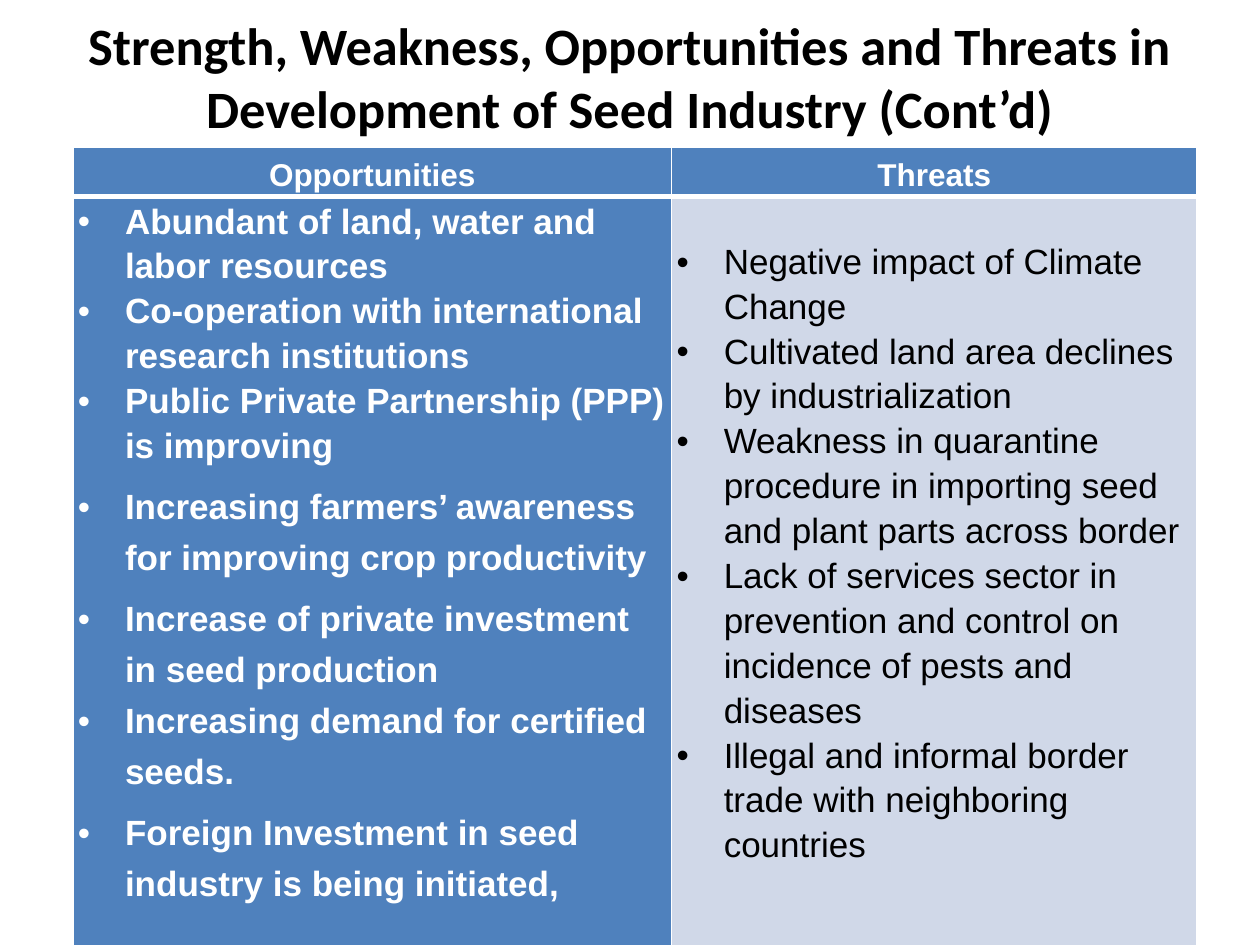
from lxml import etree
from pptx import Presentation
from pptx import util as u
from pptx.dml.color import RGBColor
from pptx.enum import text
from pptx.oxml.ns import qn

COLOURS = {"ink": "000000", "paper": "FFFFFF", "blue": "4F81BD", "pale": "D0D8E8"}

TITLE = ("Strength, Weakness, Opportunities and Threats in "
         "Development of Seed Industry (Cont’d)")
# Each point: wording, line spacing, space before in points
OPPORTUNITIES = [
    ("Abundant of land, water and labor resources", 1.15, 0),
    ("Co-operation with international research institutions", 1.15, 0),
    ("Public Private Partnership (PPP) is improving", 1.15, 0),
    ("Increasing farmers’ awareness for improving crop productivity", 1.3, 6),
    ("Increase of private investment in seed production", 1.3, 6),
    ("Increasing demand for certified seeds.", 1.3, 0),
    ("Foreign Investment in seed industry is being initiated,", 1.3, 6),
]
THREATS = [(wording, 1.15, 0) for wording in (
    "Negative impact of Climate Change",
    "Cultivated land area declines by industrialization",
    "Weakness in quarantine procedure in importing seed and plant parts across border",
    "Lack of services sector in prevention and control on incidence of pests and diseases",
    "Illegal and informal border trade with neighboring countries",
)]


class SlideWriter:
    def __init__(self, slide, font="Arial"):
        self.slide = slide
        self.font = font

    def run(self, paragraph, wording, size, colour, bold=True, font=None):
        run = paragraph.add_run()
        run.text = wording
        run.font.name = font or self.font
        run.font.size = u.Pt(size)
        run.font.bold = bold
        run.font.color.rgb = RGBColor.from_string(COLOURS[colour])

    def title(self, wording, left, top, width, height):
        box = self.slide.shapes.add_textbox(u.Cm(left), u.Cm(top), u.Cm(width), u.Cm(height))
        frame = box.text_frame
        frame.word_wrap = True
        frame.vertical_anchor = text.MSO_ANCHOR.MIDDLE
        heading = frame.paragraphs[0]
        heading.alignment = text.PP_ALIGN.CENTER
        self.run(heading, wording, 30, "ink", font="Calibri")

    def table(self, left, top, widths, heights):
        table = self.slide.shapes.add_table(
            len(heights), len(widths), u.Cm(left), u.Cm(top),
            u.Cm(sum(widths)), u.Cm(sum(heights))).table
        for column, width in zip(table.columns, widths):
            column.width = u.Cm(width)
        for row, height in zip(table.rows, heights):
            row.height = u.Cm(height)
        return table

    def cell(self, cell, fill, top_margin=0, top_line=1, bottom_line=1):
        cell.margin_left = cell.margin_right = u.Cm(0.1)
        cell.margin_top, cell.margin_bottom = u.Cm(top_margin), 0
        borders = {"lnL": 1, "lnR": 1, "lnT": top_line, "lnB": bottom_line}
        for side, points in borders.items():
            line = etree.SubElement(cell._tc.get_or_add_tcPr(), qn(f"a:{side}"),
                                    w=str(u.Pt(points)))
            solid = etree.SubElement(line, qn("a:solidFill"))
            etree.SubElement(solid, qn("a:srgbClr"), val=COLOURS["paper"])
        cell.fill.solid()
        cell.fill.fore_color.rgb = RGBColor.from_string(COLOURS[fill])

    def header(self, cell, wording):
        self.cell(cell, "blue", bottom_line=3)
        label = cell.text_frame.paragraphs[0]
        label.alignment = text.PP_ALIGN.CENTER
        label.line_spacing = 1.3
        self.run(label, wording, 18, "paper")

    def bullets(self, cell, points, fill, colour, bold, top_margin=0):
        self.cell(cell, fill, top_margin, top_line=3)
        frame = cell.text_frame
        for index, (wording, spacing, before) in enumerate(points):
            point = frame.add_paragraph() if index else frame.paragraphs[0]
            props = point._p.get_or_add_pPr()
            props.set("marL", str(u.Cm(0.95)))
            props.set("indent", str(u.Cm(-0.95)))
            etree.SubElement(props, qn("a:buFont"), typeface=self.font)
            etree.SubElement(props, qn("a:buChar"), char="•")
            point.line_spacing = spacing
            point.space_before = u.Pt(before)
            self.run(point, wording, 20, colour, bold)


def main():
    deck = Presentation()
    deck.slide_width, deck.slide_height = u.Cm(25.4), u.Cm(19.05)
    writer = SlideWriter(deck.slides.add_slide(deck.slide_layouts[6]))

    writer.title(TITLE, 1.27, 0.43, 22.86, 2.21)
    swot = writer.table(1.47, 2.97, widths=[12.07, 10.59], heights=[0.91, 15.37])
    for column, heading in enumerate(["Opportunities", "Threats"]):
        writer.header(swot.cell(0, column), heading)
    writer.bullets(swot.cell(1, 0), OPPORTUNITIES, "blue", "paper", bold=True)
    writer.bullets(swot.cell(1, 1), THREATS, "pale", "ink", bold=False, top_margin=0.81)

    deck.save("out.pptx")


if __name__ == "__main__":
    main()
